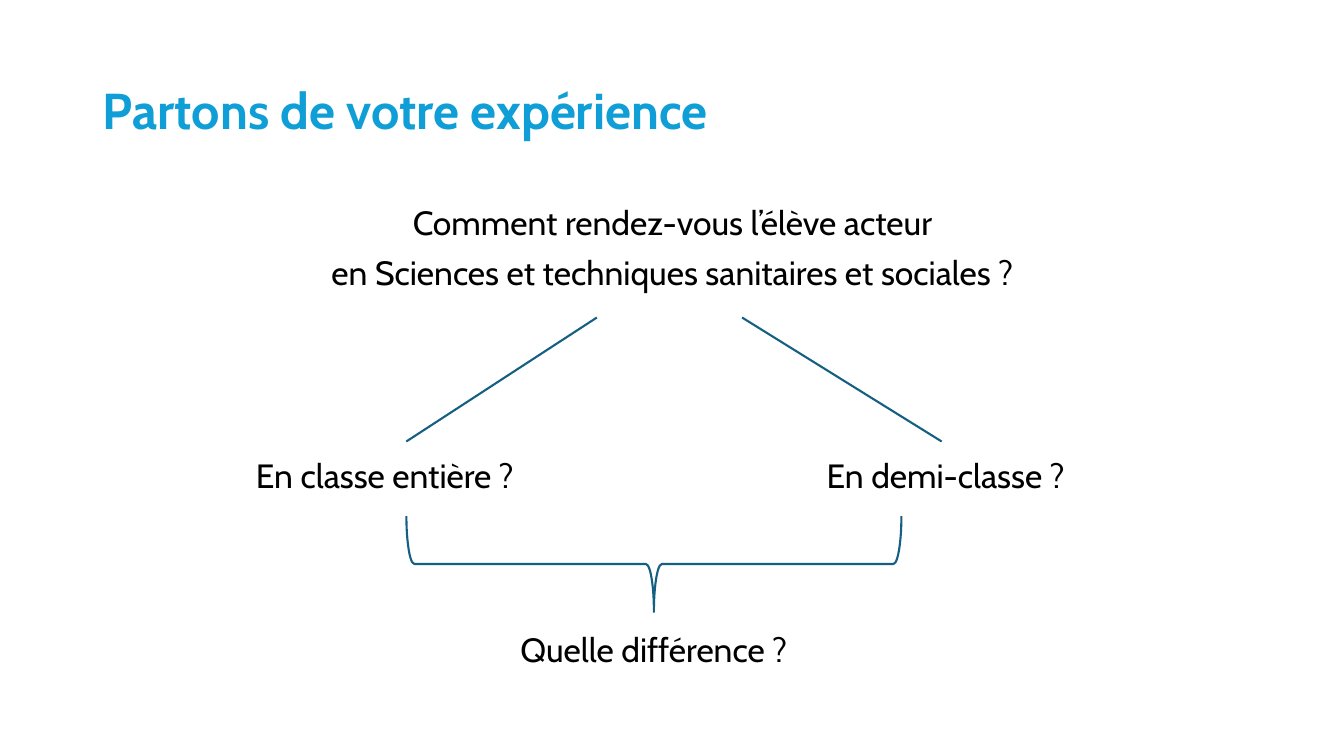
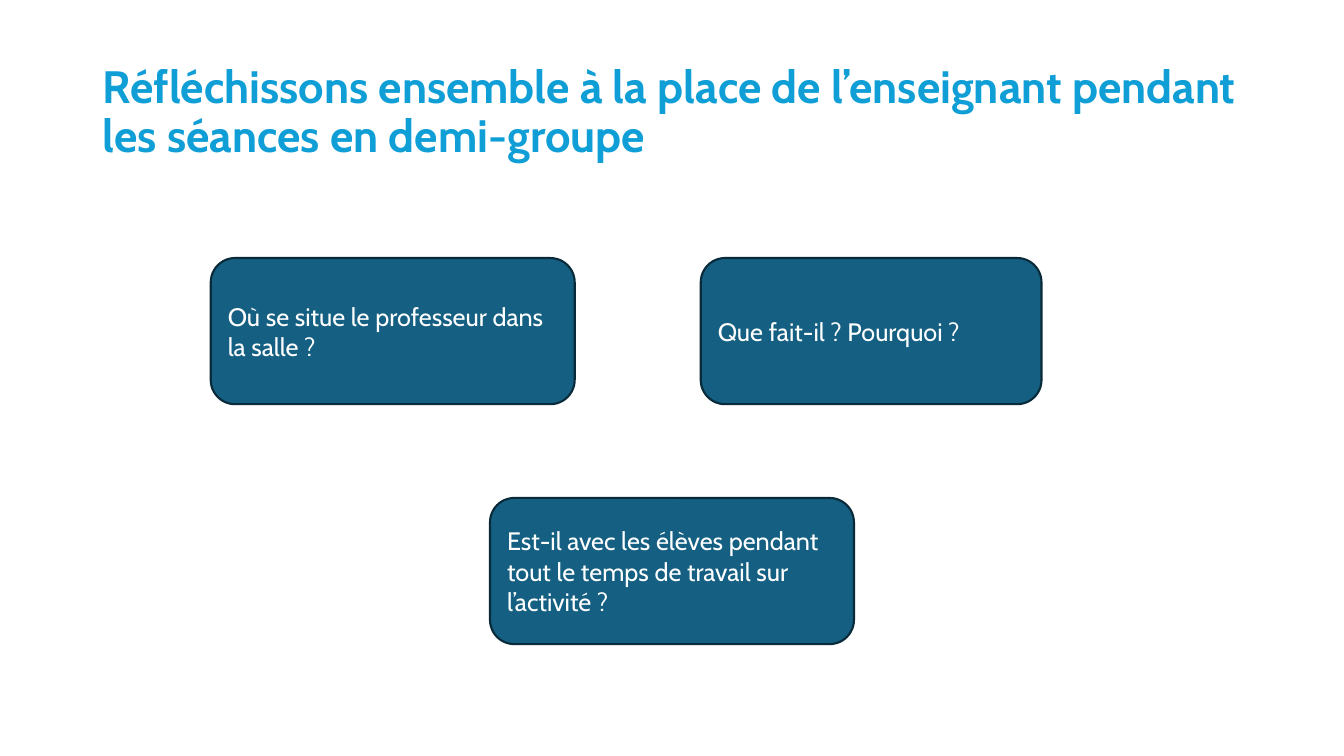
from pptx import Presentation
from pptx.dml.color import RGBColor
from pptx.enum.shapes import MSO_CONNECTOR, MSO_SHAPE
from pptx.enum.text import MSO_ANCHOR, MSO_AUTO_SIZE, PP_ALIGN
from pptx.util import Emu, Pt

FONT = "Cabin"
SKY = RGBColor(0x0F, 0x9E, 0xD5)
TEAL = RGBColor(0x15, 0x60, 0x82)
NAVY = RGBColor(0x09, 0x2A, 0x39)
BLACK = RGBColor(0x00, 0x00, 0x00)
WHITE = RGBColor(0xFF, 0xFF, 0xFF)

TITLE_ONLY = 5
LINE_WIDTH = Pt(1.5)
CARD_HEIGHT = 145


def px(n):
    """100 px make one inch."""
    return Emu(n * 9144)


def write(sp, text, size=24, color=BLACK, bold=False, align=PP_ALIGN.LEFT,
          anchor=MSO_ANCHOR.TOP, line_spacing=None, space_before=0):
    """Fill a shape with one paragraph per line of text."""
    tf = sp.text_frame
    tf.word_wrap = True
    tf.auto_size = MSO_AUTO_SIZE.NONE
    tf.vertical_anchor = anchor
    for i, line in enumerate(text.split("\n")):
        p = tf.add_paragraph() if i else tf.paragraphs[0]
        p.alignment = align
        p.line_spacing = line_spacing
        p.space_before = Pt(space_before if i else 0)
        r = p.add_run()
        r.text = line
        r.font.name = FONT
        r.font.size = Pt(size)
        r.font.bold = bold
        r.font.color.rgb = color


def add_titled_slide(prs, title, size):
    s = prs.slides.add_slide(prs.slide_layouts[TITLE_ONLY])
    sp = s.shapes.title
    sp.left, sp.top, sp.width, sp.height = map(px, (92, 40, 1150, 145))
    write(sp, title, size=size, color=SKY, bold=True,
          anchor=MSO_ANCHOR.MIDDLE, line_spacing=0.9)
    return s


def add_text(s, text, x, y, w, h, **style):
    write(s.shapes.add_textbox(px(x), px(y), px(w), px(h)), text, **style)


def add_line(s, x1, y1, x2, y2):
    line = s.shapes.add_connector(
        MSO_CONNECTOR.STRAIGHT, px(x1), px(y1), px(x2), px(y2))
    line.line.color.rgb = TEAL
    line.line.width = LINE_WIDTH
    sp_pr = line._element.spPr
    sp_pr.append(sp_pr.makeelement(
        "{http://schemas.openxmlformats.org/drawingml/2006/main}effectLst"))


def add_shape(s, kind, x, y, w, h, line_color):
    sp = s.shapes.add_shape(kind, px(x), px(y), px(w), px(h))
    sp.shadow.inherit = False
    sp.line.color.rgb = line_color
    sp.line.width = LINE_WIDTH
    return sp


def add_brace(s, x, y, w, h):
    """Add a right brace turned to point down."""
    sp = add_shape(s, MSO_SHAPE.RIGHT_BRACE, x, y, w, h, TEAL)
    sp.fill.background()
    sp.rotation = 90


def add_card(s, text, x, y, w):
    sp = add_shape(s, MSO_SHAPE.ROUNDED_RECTANGLE, x, y, w, CARD_HEIGHT, NAVY)
    sp.fill.solid()
    sp.fill.fore_color.rgb = TEAL
    write(sp, text, size=18, color=WHITE, anchor=MSO_ANCHOR.MIDDLE)


def build_experience(prs):
    s = add_titled_slide(prs, "Partons de votre expérience", 36)
    add_text(s, "Comment rendez-vous l’élève acteur\n"
                "en Sciences et techniques sanitaires et sociales ?",
             92, 200, 1150, 110, align=PP_ALIGN.CENTER,
             line_spacing=0.9, space_before=10)
    branches = (
        ("En classe entière ?", 244, 592, 403),
        ("En demi-classe ?", 810, 736, 934),
    )
    for text, x, line_start, line_end in branches:
        add_line(s, line_start, 315, line_end, 438)
        add_text(s, text, x, 446, 465, 50)
    add_brace(s, 601, 314, 95, 491)
    add_text(s, "Quelle différence ?", 474, 619, 349, 50,
             align=PP_ALIGN.CENTER)


def build_teacher_place(prs):
    s = add_titled_slide(
        prs, "Réfléchissons ensemble à la place de l’enseignant pendant "
             "les séances en demi-groupe", 32.4)
    cards = (
        ("Où se situe le professeur dans la salle ?", 209, 256, 361),
        ("Que fait-il ? Pourquoi ?", 695, 256, 338),
        ("Est-il avec les élèves pendant tout le temps de travail sur "
         "l’activité ?", 486, 494, 361),
    )
    for card in cards:
        add_card(s, *card)


def main():
    prs = Presentation()
    prs.slide_width, prs.slide_height = px(1333), px(750)
    build_experience(prs)
    build_teacher_place(prs)
    prs.save("out.pptx")


if __name__ == "__main__":
    main()
